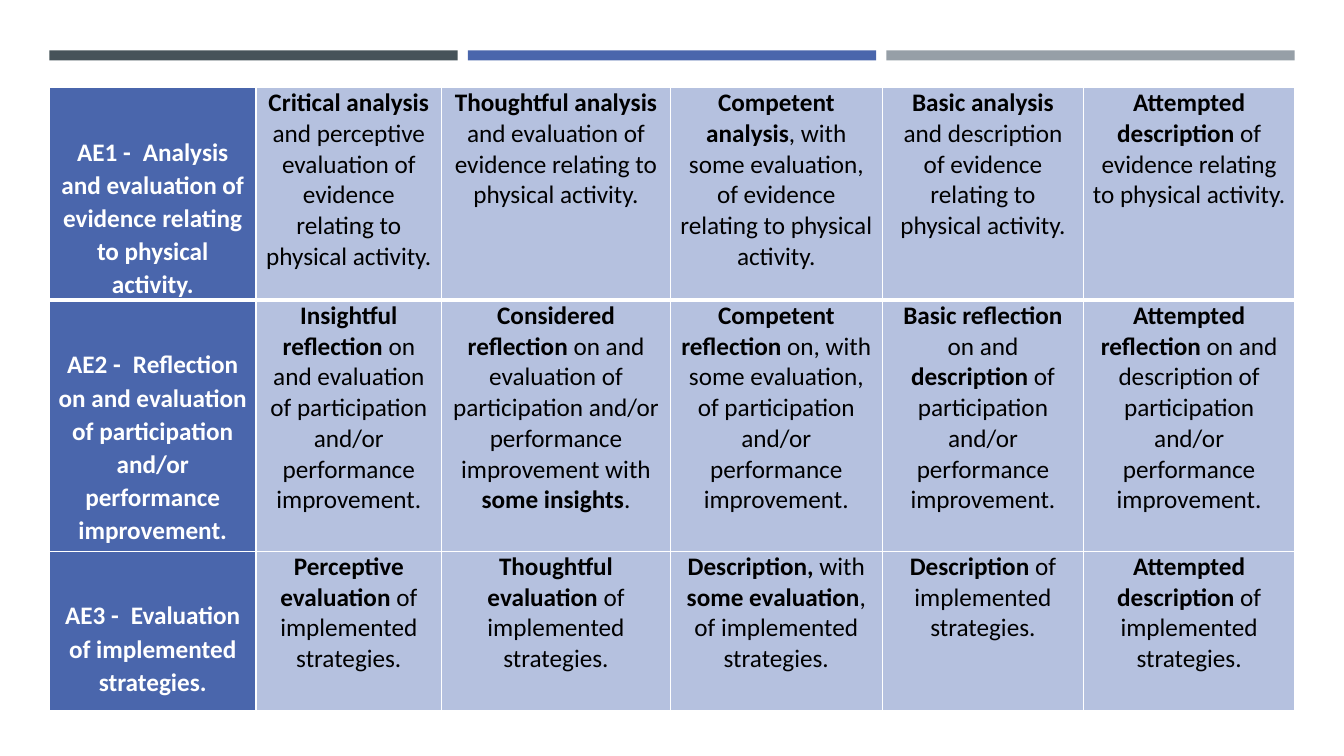
from dataclasses import dataclass

import pptx
import pptx.dml.color
import pptx.enum.shapes
import pptx.enum.text
import pptx.oxml
import pptx.oxml.ns
import pptx.util

Inches = pptx.util.Inches
Pt = pptx.util.Pt
RGBColor = pptx.dml.color.RGBColor

SLATE = RGBColor(0x46, 0x53, 0x59)
BLUE = RGBColor(0x4A, 0x66, 0xAC)
GREY = RGBColor(0x96, 0x9F, 0xA7)
PALE_BLUE = RGBColor(0xB5, 0xC1, 0xDF)
WHITE = RGBColor(0xFF, 0xFF, 0xFF)
BLACK = RGBColor(0x00, 0x00, 0x00)

FONT = "Calibri"
LEFT = 0.49
COLUMN_WIDTHS = [2.05, 1.84, 2.27, 2.1, 2, 2.09]


@dataclass
class Bar:
    left: float
    top: float
    width: float
    height: float
    color: RGBColor


@dataclass
class Criterion:
    code: str
    title: str
    height: float
    levels: list[str]  # bold passages stand between double asterisks


BARS = [Bar(LEFT + 4.15 * index, 0.5, 4.05, 0.1, color)
        for index, color in enumerate([SLATE, BLUE, GREY])]
BARS.append(Bar(LEFT, 6.42, 12.35, 0.57, SLATE))

CRITERIA = [
    Criterion(
        "AE1", "Analysis and evaluation of evidence relating to physical activity.", 2.09,
        ["**Critical analysis **and perceptive evaluation of evidence relating to physical activity.",
         "**Thoughtful analysis **and evaluation of evidence relating to physical activity.",
         "**Competent analysis**, with some evaluation, of evidence relating to physical activity.",
         "**Basic analysis **and description of evidence relating to physical activity.",
         "**Attempted description** of evidence relating to physical activity."]),
    Criterion(
        "AE2", "Reflection on and evaluation of participation and/or performance improvement.", 2.49,
        ["**Insightful reflection **on and evaluation of participation and/or performance improvement.",
         "**Considered reflection **on and evaluation of participation and/or performance "
         "improvement with **some insights**.",
         "**Competent reflection **on, with some evaluation, of participation and/or "
         "performance improvement.",
         "**Basic reflection **on and **description** of participation and/or performance improvement.",
         "**Attempted reflection **on and description of participation and/or "
         "performance improvement."]),
    Criterion(
        "AE3", "Evaluation of implemented strategies.", 1.58,
        ["**Perceptive evaluation **of implemented strategies.",
         "**Thoughtful evaluation **of implemented strategies.",
         "**Description, **with **some evaluation**, of implemented strategies.",
         "**Description** of implemented strategies.",
         "**Attempted description **of implemented strategies."]),
]


def add_bar(slide, bar: Bar) -> None:
    shape = slide.shapes.add_shape(
        pptx.enum.shapes.MSO_SHAPE.RECTANGLE,
        Inches(bar.left), Inches(bar.top), Inches(bar.width), Inches(bar.height))
    shape.shadow.inherit = False
    shape.fill.solid()
    shape.fill.fore_color.rgb = bar.color
    shape.line.fill.background()


def add_run(paragraph, text: str, size: float, bold: bool, color: RGBColor) -> None:
    run = paragraph.add_run()
    run.text = text
    run.font.name = FONT
    run.font.size = Pt(size)
    run.font.bold = bold
    run.font.color.rgb = color


def style_cell(cell, fill: RGBColor, top_margin: float, widths: dict[str, float]) -> None:
    cell.margin_left = cell.margin_right = Inches(0.09)
    cell.margin_top, cell.margin_bottom = Inches(top_margin), Inches(0)
    cell.fill.solid()
    cell.fill.fore_color.rgb = fill
    # Borders come before the fill in the cell properties
    properties = cell._tc.get_or_add_tcPr()
    for index, (side, width) in enumerate(widths.items()):
        properties.insert(index, pptx.oxml.parse_xml(
            f'<a:{side} {pptx.oxml.ns.nsdecls("a")} w="{Pt(width)}">'
            f'<a:solidFill><a:srgbClr val="{WHITE}"/></a:solidFill></a:{side}>'))


def fill_heading(cell, criterion: Criterion) -> None:
    paragraph = cell.text_frame.paragraphs[0]
    paragraph.alignment = pptx.enum.text.PP_ALIGN.CENTER
    paragraph.line_spacing = 1.07
    paragraph.space_after = Pt(8)
    for text, size in [(f"{criterion.code} - ", 18), (" ", 20), (criterion.title, 18)]:
        add_run(paragraph, text, size, True, WHITE)


def fill_level(cell, marked_text: str) -> None:
    paragraph = cell.text_frame.paragraphs[0]
    paragraph.alignment = pptx.enum.text.PP_ALIGN.CENTER
    paragraph.space_before = Pt(6)
    for index, text in enumerate(marked_text.split("**")):
        if text:
            add_run(paragraph, text, 18, index % 2 == 1, BLACK)


def add_criteria_table(slide) -> None:
    frame = slide.shapes.add_table(
        len(CRITERIA), len(COLUMN_WIDTHS), Inches(LEFT), Inches(0.87),
        Inches(sum(COLUMN_WIDTHS)), Inches(sum(criterion.height for criterion in CRITERIA)))
    table = frame.table
    table.first_row = table.horz_banding = False
    for column, width in zip(table.columns, COLUMN_WIDTHS):
        column.width = Inches(width)
    for row_index, criterion in enumerate(CRITERIA):
        row = table.rows[row_index]
        row.height = Inches(criterion.height)
        # A thick rule separates the first row from the second
        widths = {"lnL": 1, "lnR": 1,
                  "lnT": 3 if row_index == 1 else 1,
                  "lnB": 3 if row_index == 0 else 1}
        heading, *levels = row.cells
        style_cell(heading, BLUE, 0.44, widths)
        fill_heading(heading, criterion)
        for cell, marked_text in zip(levels, criterion.levels):
            style_cell(cell, PALE_BLUE, 0, widths)
            fill_level(cell, marked_text)


def main() -> None:
    presentation = pptx.Presentation()
    presentation.slide_width = Inches(13.33)
    presentation.slide_height = Inches(7.5)
    slide = presentation.slides.add_slide(presentation.slide_layouts[6])

    # Decorative bars, then the table over the lowest one
    for bar in BARS:
        add_bar(slide, bar)
    add_criteria_table(slide)

    presentation.save("out.pptx")


if __name__ == "__main__":
    main()
